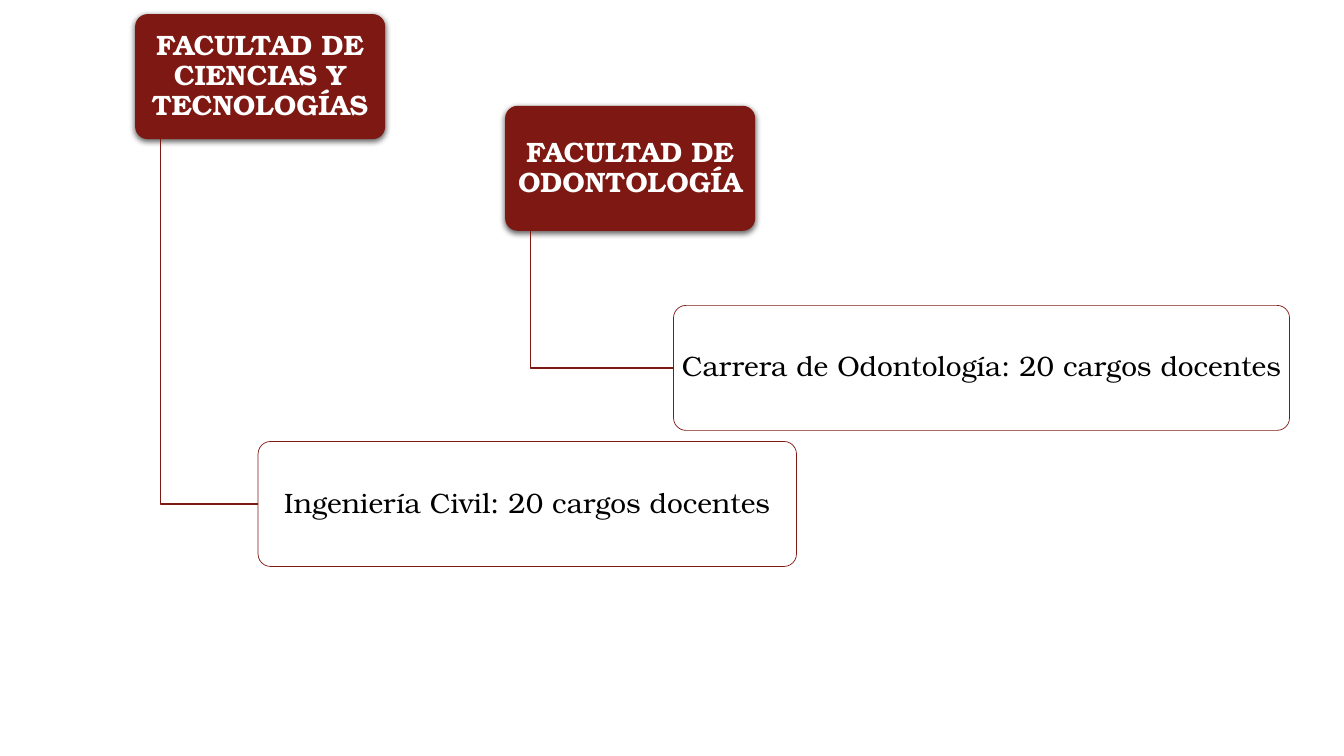
from dataclasses import dataclass

from lxml import etree
from pptx import Presentation
from pptx.dml.color import RGBColor
from pptx.enum.shapes import MSO_SHAPE
from pptx.enum.text import MSO_ANCHOR, PP_ALIGN
from pptx.oxml.ns import qn
from pptx.shapes.autoshape import Shape
from pptx.shapes.shapetree import SlideShapes
from pptx.util import Emu, Pt

ROUNDED = MSO_SHAPE.ROUNDED_RECTANGLE
MIDDLE = MSO_ANCHOR.MIDDLE
CENTER = PP_ALIGN.CENTER

EMU_PER_PX = 9144
SLIDE_W, SLIDE_H = 1333, 750
BOX_H = 124
TRUNK_INDENT = 25
FONT = "TeX Gyre Bonum"
COLORS = {"maroon": "7E1813", "white": "FFFFFF", "black": "000000"}


@dataclass(frozen=True)
class Box:
    text: str
    left: int
    top: int
    width: int


@dataclass(frozen=True)
class Branch:
    faculty: Box
    career: Box


BRANCHES = [
    Branch(Box("FACULTAD DE CIENCIAS Y TECNOLOGÍAS", 134, 14, 248),
           Box("Ingeniería Civil: 20 cargos docentes", 256, 438, 534)),
    Branch(Box("FACULTAD DE ODONTOLOGÍA", 501, 105, 248),
           Box("Carrera de Odontología: 20 cargos docentes", 668, 303, 611)),
]


def px(length: int) -> Emu:
    return Emu(length * EMU_PER_PX)


def rgb(name: str) -> RGBColor:
    return RGBColor.from_string(COLORS[name])


def add_alpha(color: etree._Element, percent: int) -> None:
    etree.SubElement(color, qn("a:alpha"), val=str(percent * 1000))


def add_soft_shadow(shape: Shape) -> None:
    effects = shape._element.spPr.find(qn("a:effectLst"))
    shadow = etree.SubElement(
        effects, qn("a:outerShdw"), blurRad=str(Pt(4.5)), dist=str(Pt(1.5)),
        dir="5400000", algn="ctr", rotWithShape="0")
    color = etree.SubElement(shadow, qn("a:srgbClr"), val=COLORS["black"])
    add_alpha(color, 63)


def add_box(shapes: SlideShapes, box: Box, fill: str, ink: str, bold: bool) -> Shape:
    """Draw a rounded box with its centred label."""
    shape = shapes.add_shape(ROUNDED, px(box.left), px(box.top), px(box.width), px(BOX_H))
    shape.adjustments[0] = 0.1
    shape.shadow.inherit = False
    shape.fill.solid()
    shape.fill.fore_color.rgb = rgb(fill)

    frame = shape.text_frame
    frame.word_wrap = True
    frame.vertical_anchor = MIDDLE
    frame.margin_left = frame.margin_right = px(3)
    frame.margin_top = frame.margin_bottom = px(3)
    paragraph = frame.paragraphs[0]
    paragraph.alignment = CENTER
    paragraph.line_spacing = 0.9
    run = paragraph.add_run()
    run.text = box.text
    run.font.name = FONT
    run.font.size = Pt(20)
    run.font.bold = bold
    run.font.color.rgb = rgb(ink)
    return shape


def add_faculty(shapes: SlideShapes, box: Box) -> None:
    shape = add_box(shapes, box, "maroon", "white", True)
    shape.line.fill.background()
    add_soft_shadow(shape)


def add_career(shapes: SlideShapes, box: Box) -> None:
    shape = add_box(shapes, box, "white", "black", False)
    add_alpha(shape._element.spPr.find(qn("a:solidFill"))[0], 90)
    shape.line.color.rgb = rgb("maroon")
    shape.line.width = Pt(0.5)


def add_elbow(shapes: SlideShapes, branch: Branch) -> None:
    """Run a line down from the faculty and across to the career."""
    trunk_x = branch.faculty.left + TRUNK_INDENT
    career_y = branch.career.top + BOX_H // 2
    builder = shapes.build_freeform(trunk_x, branch.faculty.top + BOX_H, scale=EMU_PER_PX)
    builder.add_line_segments(
        [(trunk_x, career_y), (branch.career.left, career_y)], close=False)
    elbow = builder.convert_to_shape()
    elbow.shadow.inherit = False
    elbow.fill.background()
    elbow.line.color.rgb = rgb("maroon")
    elbow.line.width = Pt(1)


def main() -> None:
    deck = Presentation()
    deck.slide_width, deck.slide_height = px(SLIDE_W), px(SLIDE_H)
    slide = deck.slides.add_slide(deck.slide_layouts[6])
    for branch in BRANCHES:
        add_faculty(slide.shapes, branch.faculty)
        add_elbow(slide.shapes, branch)
        add_career(slide.shapes, branch.career)
    deck.save("out.pptx")


if __name__ == "__main__":
    main()
